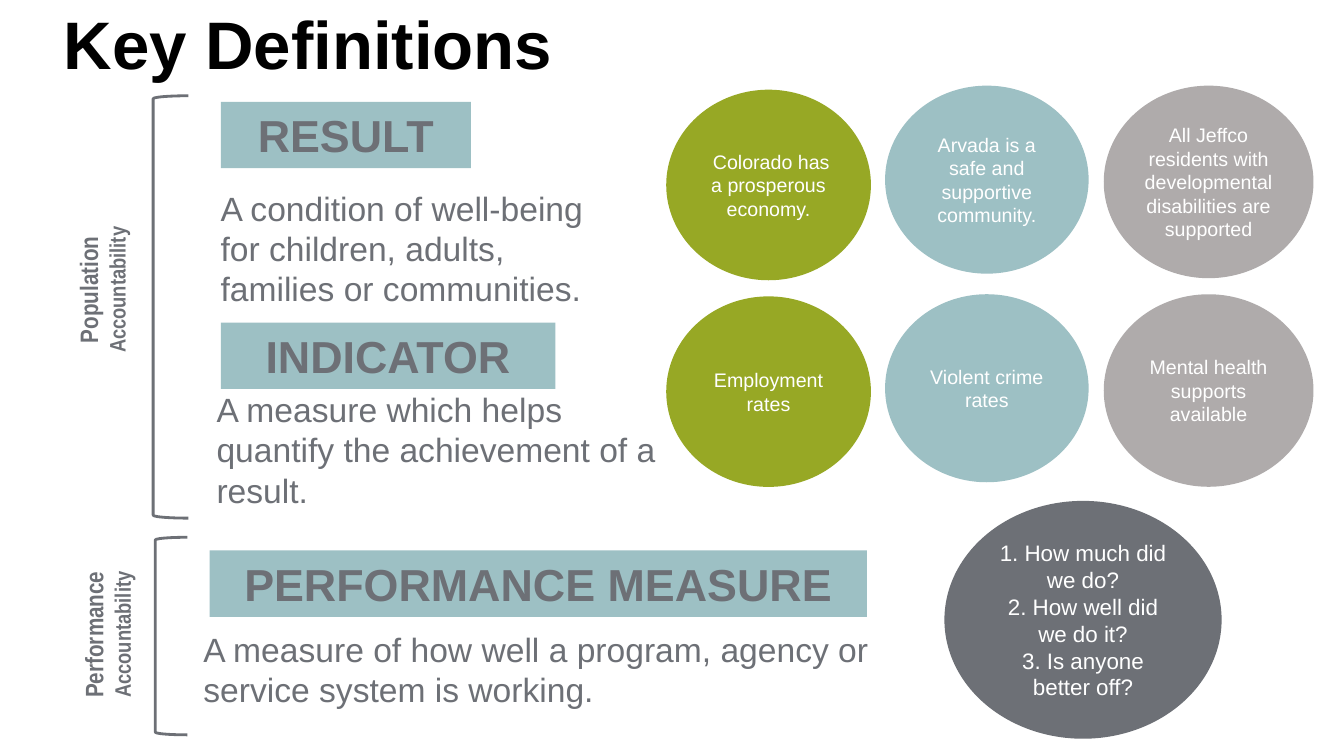
from dataclasses import dataclass

from pptx import Presentation
from pptx.dml.color import RGBColor
from pptx.enum.shapes import MSO_SHAPE
from pptx.enum.text import MSO_ANCHOR, MSO_AUTO_SIZE, PP_ALIGN
from pptx.shapes.autoshape import Shape
from pptx.slide import Slide
from pptx.text.text import Font
from pptx.util import Pt

ELLIPSE = MSO_SHAPE.OVAL
RECTANGLE = MSO_SHAPE.RECTANGLE
LEFT_BRACKET = MSO_SHAPE.LEFT_BRACKET
TOP, MIDDLE = MSO_ANCHOR.TOP, MSO_ANCHOR.MIDDLE
LEFT, CENTER = PP_ALIGN.LEFT, PP_ALIGN.CENTER
NO_AUTOFIT = MSO_AUTO_SIZE.NONE
TITLE_ONLY_LAYOUT = 5

COLORS = {
    "black": "000000",
    "white": "FFFFFF",
    "slate": "6D7076",
    "teal": "9DC0C4",
    "green": "97A825",
    "gray": "AFABAB",
}


@dataclass(frozen=True)
class Box:
    left: float
    top: float
    width: float
    height: float

    def lengths(self) -> tuple[Pt, Pt, Pt, Pt]:
        return Pt(self.left), Pt(self.top), Pt(self.width), Pt(self.height)


@dataclass(frozen=True)
class Definition:
    term: str
    term_box: Box
    meaning: str
    meaning_box: Box


@dataclass(frozen=True)
class Accountability:
    level: str
    bracket: Box
    label_center: tuple[float, float]


@dataclass(frozen=True)
class ExampleColumn:
    color: str
    left: float
    width: float
    height: float
    result_top: float
    indicator_top: float
    result: str
    indicator: str


DEFINITIONS = [
    Definition("RESULT", Box(157.7, 72.7, 178.6, 47.5),
               "A condition of well-being for children, adults, families or communities.",
               Box(150.5, 130.3, 275.8, 94.3)),
    Definition("INDICATOR", Box(157.7, 230.4, 239, 47.5),
               "A measure which helps quantify the achievement of a result.",
               Box(147.6, 274.3, 334.8, 94.3)),
    Definition("PERFORMANCE MEASURE", Box(149.8, 393.1, 469.4, 47.5),
               "A measure of how well a program, agency or service system is working.",
               Box(138.2, 445.7, 566.6, 94.3)),
]
ACCOUNTABILITIES = [
    Accountability("Population", Box(109.4, 68.4, 25.2, 301.7), (72.5, 207)),
    Accountability("Performance", Box(110.9, 383.8, 23, 141.1), (76.3, 453.3)),
]
EXAMPLE_COLUMNS = [
    ExampleColumn("green", 475.9, 146.2, 136.1, 64.1, 211.7,
                  " Colorado has a prosperous economy.", "Employment rates"),
    ExampleColumn("teal", 632.2, 145.4, 134.3, 61.2, 210.2,
                  "Arvada is a safe and supportive community.", "Violent crime rates"),
    ExampleColumn("gray", 788.4, 149.8, 137.5, 61.2, 210.2,
                  "All Jeffco residents with developmental disabilities are supported",
                  "Mental health supports available"),
]
QUESTIONS = "1. How much did we do?\n2. How well did we do it?\n3. Is anyone better off?"


def rgb(color: str) -> RGBColor:
    return RGBColor.from_string(COLORS[color])


def set_font(font: Font, size: float, color: str, bold: bool = False,
             name: str = "Arial") -> None:
    font.name, font.size, font.bold = name, Pt(size), bold
    font.color.rgb = rgb(color)


def write_text(shape: Shape, text: str, size: float, color: str, bold: bool = False,
               align: PP_ALIGN = CENTER, anchor: MSO_ANCHOR = MIDDLE) -> None:
    frame = shape.text_frame
    frame.word_wrap = True
    frame.auto_size = NO_AUTOFIT
    frame.vertical_anchor = anchor
    frame.text = text
    for paragraph in frame.paragraphs:
        paragraph.alignment = align
        set_font(paragraph.font, size, color, bold)


def add_filled_shape(slide: Slide, kind: MSO_SHAPE, box: Box, fill: str) -> Shape:
    shape = slide.shapes.add_shape(kind, *box.lengths())
    shape.shadow.inherit = False
    shape.fill.solid()
    shape.fill.fore_color.rgb = rgb(fill)
    shape.line.fill.background()
    return shape


def add_title(slide: Slide) -> None:
    title = slide.shapes.title
    title.left, title.top, title.width, title.height = Box(38.2, -2.2, 581.8, 65.5).lengths()
    write_text(title, "Key Definitions", 48, "black", bold=True, align=LEFT, anchor=TOP)


def add_definition(slide: Slide, definition: Definition) -> None:
    meaning = slide.shapes.add_textbox(*definition.meaning_box.lengths())
    write_text(meaning, definition.meaning, 24, "slate", align=LEFT, anchor=TOP)
    term = add_filled_shape(slide, RECTANGLE, definition.term_box, "teal")
    write_text(term, definition.term, 32, "slate", bold=True)


def add_accountability(slide: Slide, accountability: Accountability) -> None:
    """Draw a bracket and, left of it, a label that reads upwards."""
    bracket = slide.shapes.add_shape(LEFT_BRACKET, *accountability.bracket.lengths())
    bracket.shadow.inherit = False
    bracket.fill.background()
    bracket.line.color.rgb = rgb("slate")
    bracket.line.width = Pt(2)

    width, height = 120, 50
    center_x, center_y = accountability.label_center
    label_box = Box(center_x - width / 2, center_y - height / 2, width, height)
    label = slide.shapes.add_textbox(*label_box.lengths())
    label.rotation = 270
    frame = label.text_frame
    frame.word_wrap = True
    frame.vertical_anchor = MIDDLE
    paragraph = frame.paragraphs[0]
    paragraph.alignment = CENTER
    for text, size in ((accountability.level, 18), (" Accountability", 16)):
        run = paragraph.add_run()
        run.text = text
        set_font(run.font, size, "slate", bold=True, name="Arial Narrow")


def add_circle(slide: Slide, box: Box, fill: str, text: str, size: float) -> None:
    circle = add_filled_shape(slide, ELLIPSE, box, fill)
    write_text(circle, text, size, "white")


def add_examples(slide: Slide, column: ExampleColumn) -> None:
    for top, text in ((column.result_top, column.result),
                      (column.indicator_top, column.indicator)):
        box = Box(column.left, top, column.width, column.height)
        add_circle(slide, box, column.color, text, 14)


def main() -> None:
    presentation = Presentation()
    presentation.slide_width, presentation.slide_height = Pt(960), Pt(540)
    slide = presentation.slides.add_slide(presentation.slide_layouts[TITLE_ONLY_LAYOUT])
    add_title(slide)
    for definition in DEFINITIONS:
        add_definition(slide, definition)
    for accountability in ACCOUNTABILITIES:
        add_accountability(slide, accountability)
    for column in EXAMPLE_COLUMNS:
        add_examples(slide, column)
    add_circle(slide, Box(674.6, 357.8, 198, 169.9), "slate", QUESTIONS, 16)
    presentation.save("out.pptx")


if __name__ == "__main__":
    main()
